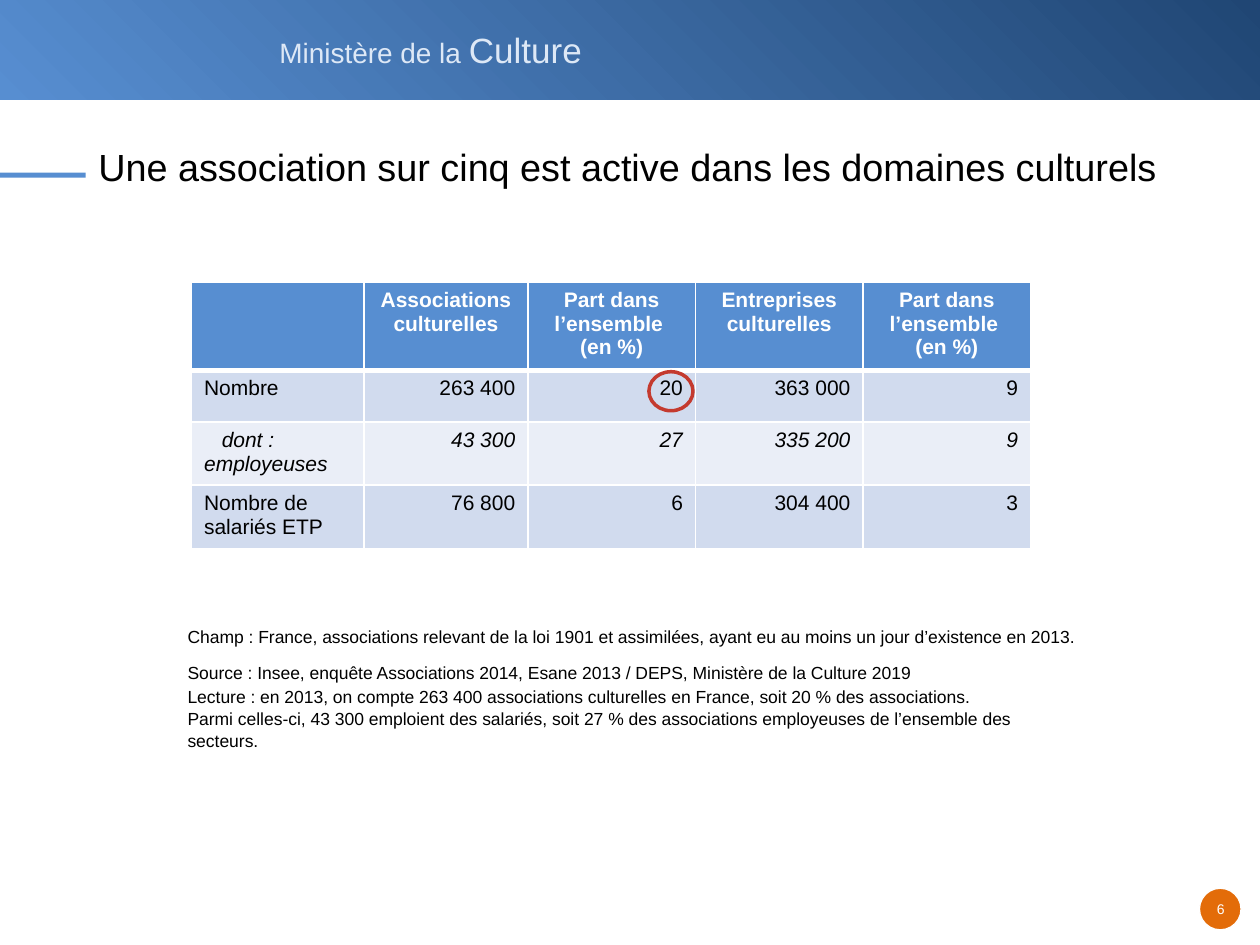
"""Build the slide on the share of cultural associations in France."""
from dataclasses import dataclass
from typing import Any

from lxml.etree import SubElement
from pptx import Presentation
from pptx.dml.color import RGBColor as Rgb
from pptx.enum.shapes import MSO_SHAPE as Kind
from pptx.enum.text import MSO_ANCHOR as Anchor, MSO_AUTO_SIZE as Fit, PP_ALIGN as Align
from pptx.oxml.ns import qn
from pptx.util import Inches, Pt

HUES = {
    "white": "FFFFFF", "black": "000000", "navy": "204674", "blue": "578ED1",
    "pale": "DDE8F6", "orange": "E36C09", "red": "C43A2F",
    "band": "D1DBEE", "light": "EAEEF7",
}


@dataclass
class Box:
    """Place and size in inches."""
    left: float
    top: float
    width: float
    height: float

    def lengths(self) -> tuple:
        """Return the four lengths."""
        return tuple(map(Inches, (self.left, self.top, self.width, self.height)))


@dataclass
class Row:
    """One line of the table and its look."""
    cells: tuple
    fill: str
    slant: bool = False
    indent: float = 0


ROWS = [
    Row(("", "Associations culturelles", "Part dans l’ensemble \n(en %)",
         "Entreprises culturelles", "Part dans l’ensemble \n(en %)"), "blue"),
    Row(("Nombre", "263 400", "20", "363 000", "9"), "band"),
    Row(("dont : employeuses", "43 300", "27", "335 200", "9"), "light", True, 0.14),
    Row(("Nombre de salariés ETP", "76 800", "6", "304 400", "3"), "band"),
]
WIDTHS = (1.37, 1.3, 1.33, 1.33, 1.33)
NOTES = [
    ("Champ : France, associations relevant de la loi 1901 et assimilées, "
     "ayant eu au moins un jour d’existence en 2013.", 0),
    ("Source : Insee, enquête Associations 2014, Esane 2013 / DEPS, "
     "Ministère de la Culture 2019", 8.5),
    ("Lecture : en 2013, on compte 263 400 associations culturelles en France, "
     "soit 20 % des associations.", 1.5),
    ("Parmi celles-ci, 43 300 emploient des salariés, soit 27 % des associations "
     "employeuses de l’ensemble des secteurs.", 1),
]


def rgb(hue: str) -> Rgb:
    """Look up a colour by name."""
    return Rgb.from_string(HUES[hue])


def write(para: Any, text: str, *, size: float, hue: str = "black", bold: bool = False,
          slant: bool = False, align: Any = Align.LEFT, before: float = 0) -> None:
    """Add formatted text to a paragraph."""
    para.alignment = align
    if before:
        para.space_before = Pt(before)
    for i, line in enumerate(text.split("\n")):
        if i:
            para.add_line_break()
        run = para.add_run()
        run.text = line
        font = run.font
        font.name, font.size = "Arial", Pt(size)
        font.bold, font.italic = bold, slant
        font.color.rgb = rgb(hue)


def add_form(slide: Any, kind: Any, box: Box, fill: str = "", line: str = "",
             weight: float = 0) -> Any:
    """Draw a preset shape without shadow."""
    form = slide.shapes.add_shape(kind, *box.lengths())
    form.shadow.inherit = False
    if fill:
        form.fill.solid()
        form.fill.fore_color.rgb = rgb(fill)
    else:
        form.fill.background()
    if line:
        form.line.color.rgb = rgb(line)
        form.line.width = Pt(weight)
    else:
        form.line.fill.background()
    return form


def add_text(slide: Any, box: Box, wrap: bool = False) -> Any:
    """Add an empty text box and return its frame."""
    frame = slide.shapes.add_textbox(*box.lengths()).text_frame
    frame.word_wrap = wrap
    return frame


def set_edge(cell: Any, side: str, weight: float) -> None:
    """Draw one white cell border."""
    edge = SubElement(cell._tc.get_or_add_tcPr(), qn(f"a:ln{side}"), w=str(Pt(weight)))
    SubElement(SubElement(edge, qn("a:solidFill")), qn("a:srgbClr"), val=HUES["white"])


def add_grid(slide: Any, box: Box) -> None:
    """Draw the table of figures."""
    grid = slide.shapes.add_table(len(ROWS), len(WIDTHS), *box.lengths()).table
    for col, width in zip(grid.columns, WIDTHS):
        col.width = Inches(width)
    for r, row in enumerate(ROWS):
        grid.rows[r].height = Inches(0.41)
        head = r == 0
        for c, text in enumerate(row.cells):
            cell = grid.cell(r, c)
            for side in "LRTB":
                thick = (head and side == "B") or (r == 1 and side == "T")
                set_edge(cell, side, 3 if thick else 1)
            cell.fill.solid()
            cell.fill.fore_color.rgb = rgb(row.fill)
            para = cell.text_frame.paragraphs[0]
            if c == 0 and row.indent:
                para._p.get_or_add_pPr().set("indent", str(Inches(row.indent)))
            align = Align.CENTER if head else Align.RIGHT if c else Align.LEFT
            write(para, text, size=12, hue="white" if head else "black",
                  bold=head, slant=row.slant, align=align)


def add_frame(slide: Any) -> None:
    """Draw the banner, the rule and the page badge."""
    banner = add_form(slide, Kind.RECTANGLE, Box(0, 0, 10, 0.79), "blue")
    banner.fill.gradient()
    banner.fill.gradient_angle = 225
    for stop, hue in zip(banner.fill.gradient_stops, ("navy", "blue")):
        stop.color.rgb = rgb(hue)
    name = add_text(slide, Box(2.12, 0.18, 2.63, 0.44)).paragraphs[0]
    write(name, "Ministère de la ", size=16, hue="pale")
    write(name, "Culture", size=20, hue="pale")
    add_form(slide, Kind.RECTANGLE, Box(0, 1.37, 0.68, 0.04), "blue")
    add_form(slide, Kind.OVAL, Box(9.52, 7.05, 0.33, 0.33), "orange", "white", 0.75)
    page = add_text(slide, Box(9.54, 7.1, 0.3, 0.23))
    page.margin_left = page.margin_right = Inches(0.05)
    write(page.paragraphs[0], "6", size=8, hue="white", align=Align.CENTER)


def add_title(slide: Any, text: str) -> None:
    """Place and fill the title."""
    title = slide.shapes.title
    title.left, title.top, title.width, title.height = Box(0.68, 1.06, 8.92, 0.59).lengths()
    frame = title.text_frame
    frame.auto_size, frame.vertical_anchor = Fit.NONE, Anchor.TOP
    frame.paragraphs[0].line_spacing = Pt(28)
    write(frame.paragraphs[0], text, size=21.6)


def add_notes(slide: Any) -> None:
    """Write the scope, source and reading notes."""
    frame = add_text(slide, Box(1.39, 4.92, 7.32, 1.21), wrap=True)
    for i, (text, gap) in enumerate(NOTES):
        para = frame.add_paragraph() if i else frame.paragraphs[0]
        write(para, text, size=10, before=gap)


def main() -> None:
    """Build and save the deck."""
    deck = Presentation()
    deck.slide_width, deck.slide_height = Inches(10), Inches(7.5)
    slide = deck.slides.add_slide(deck.slide_layouts[5])
    add_frame(slide)
    add_title(slide, "Une association sur cinq est active dans les domaines culturels")
    add_grid(slide, Box(1.52, 2.24, 6.67, 1.64))
    add_notes(slide)
    add_form(slide, Kind.OVAL, Box(5.15, 2.95, 0.35, 0.31), line="red", weight=2)
    deck.save("out.pptx")


if __name__ == "__main__":
    main()
